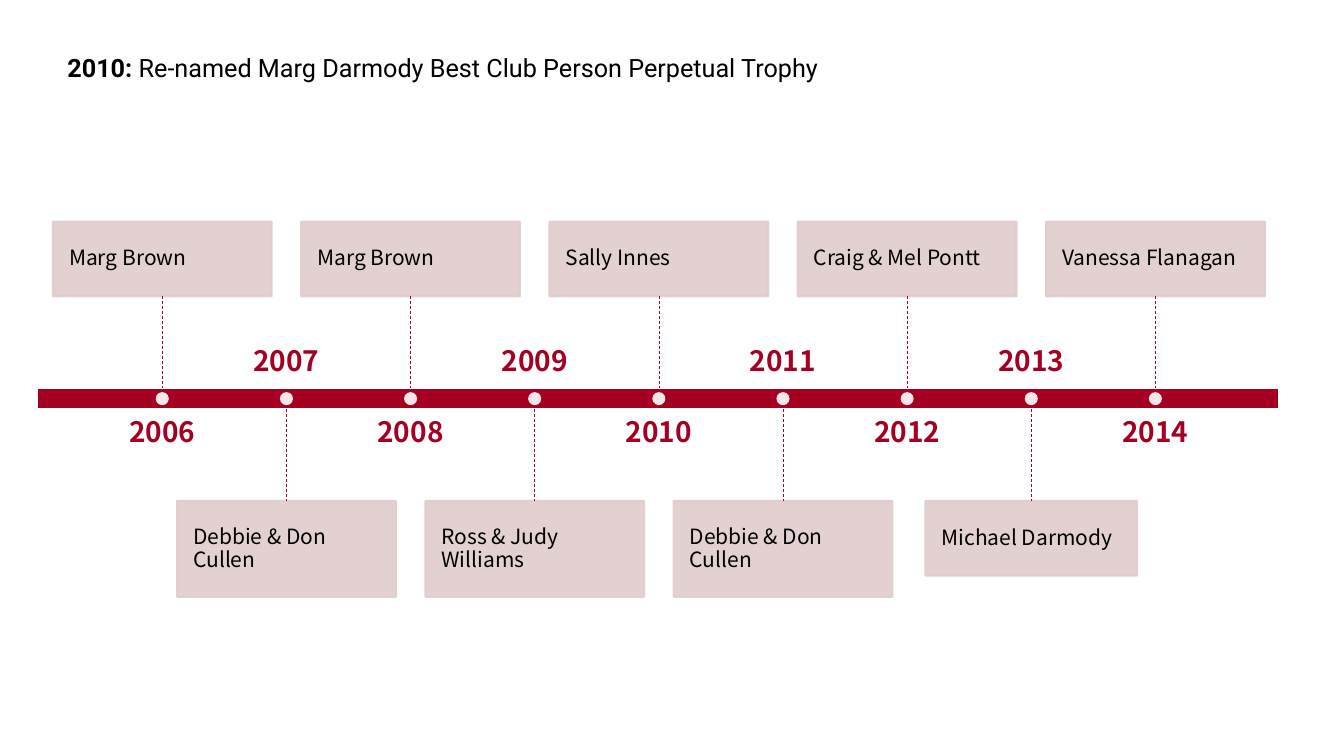
"""Build a timeline slide of the club person trophy winners from 2006 to 2014."""
from lxml import etree
from pptx import Presentation
from pptx.dml.color import RGBColor
from pptx.enum.dml import MSO_LINE
from pptx.enum.shapes import MSO_CONNECTOR, MSO_SHAPE
from pptx.enum.text import MSO_ANCHOR, MSO_AUTO_SIZE, PP_ALIGN
from pptx.oxml.ns import qn
from pptx.util import Inches, Pt

RECTANGLE, OVAL = MSO_SHAPE.RECTANGLE, MSO_SHAPE.OVAL
STRAIGHT, DASH = MSO_CONNECTOR.STRAIGHT, MSO_LINE.DASH
TOP, MIDDLE, BOTTOM = MSO_ANCHOR.TOP, MSO_ANCHOR.MIDDLE, MSO_ANCHOR.BOTTOM
LEFT, CENTER = PP_ALIGN.LEFT, PP_ALIGN.CENTER

COLORS = {"red": "A50021", "rose": "E1CCCD", "white": "FFFFFF", "black": "000000"}
YEAR_FORMAT = {"name": "Noto Sans CJK JP", "size": Pt(20), "bold": True}
NAME_FORMAT = {"name": "Noto Sans CJK JP", "size": Pt(15), "bold": False}
TITLE_FORMAT = {"name": "Roboto", "size": Pt(18)}

WINNERS = [
    ("2006", "Marg Brown", 2.17, 0.74),
    ("2007", "Debbie & Don Cullen", 2.17, 0.95),
    ("2008", "Marg Brown", 2.17, 0.74),
    ("2009", "Ross & Judy Williams", 2.17, 0.95),
    ("2010", "Sally Innes", 2.17, 0.74),
    ("2011", "Debbie & Don Cullen", 2.17, 0.95),
    ("2012", "Craig & Mel Pontt", 2.17, 0.74),
    ("2013", "Michael Darmody", 2.1, 0.74),
    ("2014", "Vanessa Flanagan", 2.17, 0.74),
]
FIRST_CENTER, LAST_CENTER = 1.61, 11.46
STEP = (LAST_CENTER - FIRST_CENTER) / (len(WINNERS) - 1)
BAR_TOP, BAR_HEIGHT = 3.85, 0.21
BAR_BOTTOM = BAR_TOP + BAR_HEIGHT
UPPER_BOX_TOP, LOWER_BOX_TOP = 2.2, 4.97
YEAR_WIDTH, YEAR_HEIGHT = 1.97, 0.6
DOT_SIZE = 0.13

presentation = Presentation()
presentation.slide_width = Inches(13.33)
presentation.slide_height = Inches(7.5)
slide = presentation.slides.add_slide(presentation.slide_layouts[6])


def add_block(kind, left, top, width, height, fill, line=None, opacity=100):
    """Add a filled preset shape with an optional outline."""
    shape = slide.shapes.add_shape(kind, Inches(left), Inches(top), Inches(width), Inches(height))
    shape.shadow.inherit = False
    shape.fill.solid()
    shape.fill.fore_color.rgb = RGBColor.from_string(COLORS[fill])
    if line:
        shape.line.color.rgb = RGBColor.from_string(COLORS[line])
        shape.line.width = Pt(1.5)
    else:
        shape.line.fill.background()
    if opacity < 100:
        for color in shape._element.spPr.iter(qn("a:srgbClr")):
            etree.SubElement(color, qn("a:alpha"), val=str(opacity * 1000))
    return shape


def write_text(shape, text, color, formats, alignment, anchor, inset):
    """Write one wrapped paragraph into a shape."""
    frame = shape.text_frame
    frame.word_wrap = True
    frame.vertical_anchor = anchor
    for side in ("left", "top", "right", "bottom"):
        setattr(frame, f"margin_{side}", Inches(inset))
    paragraph = frame.paragraphs[0]
    paragraph.alignment = alignment
    paragraph.line_spacing = 0.9
    run = paragraph.add_run()
    run.text = text
    run.font.color.rgb = RGBColor.from_string(COLORS[color])
    for attribute, value in formats.items():
        setattr(run.font, attribute, value)


add_block(RECTANGLE, 0.37, BAR_TOP, 12.32, BAR_HEIGHT, "red", "white")

for index, (year, winner, box_width, box_height) in enumerate(WINNERS):
    center = FIRST_CENTER + index * STEP
    if index % 2 == 0:
        box_top, year_top, year_anchor = UPPER_BOX_TOP, 4.15, TOP
        line_top, line_bottom = box_top + box_height, BAR_TOP
    else:
        box_top, year_top, year_anchor = LOWER_BOX_TOP, 3.15, BOTTOM
        line_top, line_bottom = BAR_BOTTOM, box_top

    year_label = slide.shapes.add_textbox(
        Inches(center - YEAR_WIDTH / 2), Inches(year_top), Inches(YEAR_WIDTH), Inches(YEAR_HEIGHT))
    write_text(year_label, year, "red", YEAR_FORMAT, CENTER, year_anchor, 0)

    winner_box = add_block(RECTANGLE, center - box_width / 2, box_top, box_width, box_height,
                           "rose", "rose", 90)
    write_text(winner_box, winner, "black", NAME_FORMAT, LEFT, MIDDLE, 0.16)

    connector = slide.shapes.add_connector(
        STRAIGHT, Inches(center), Inches(line_top), Inches(center), Inches(line_bottom))
    connector.line.color.rgb = RGBColor.from_string(COLORS["red"])
    connector.line.width = Pt(0.5)
    connector.line.dash_style = DASH
    etree.SubElement(connector._element.spPr, qn("a:effectLst"))

    add_block(OVAL, center - DOT_SIZE / 2, BAR_TOP + (BAR_HEIGHT - DOT_SIZE) / 2,
              DOT_SIZE, DOT_SIZE, "white", opacity=90)

title = slide.shapes.add_textbox(Inches(0.57), Inches(0.47), Inches(8.85), Inches(0.4))
title.text_frame.word_wrap = True
title.text_frame.auto_size = MSO_AUTO_SIZE.SHAPE_TO_FIT_TEXT
title_runs = [("2010: ", True), ("Re-named Marg Darmody Best Club Person Perpetual Trophy", False)]
for text, bold in title_runs:
    run = title.text_frame.paragraphs[0].add_run()
    run.text = text
    run.font.color.rgb = RGBColor.from_string(COLORS["black"])
    for attribute, value in {**TITLE_FORMAT, "bold": bold}.items():
        setattr(run.font, attribute, value)

presentation.save("out.pptx")
